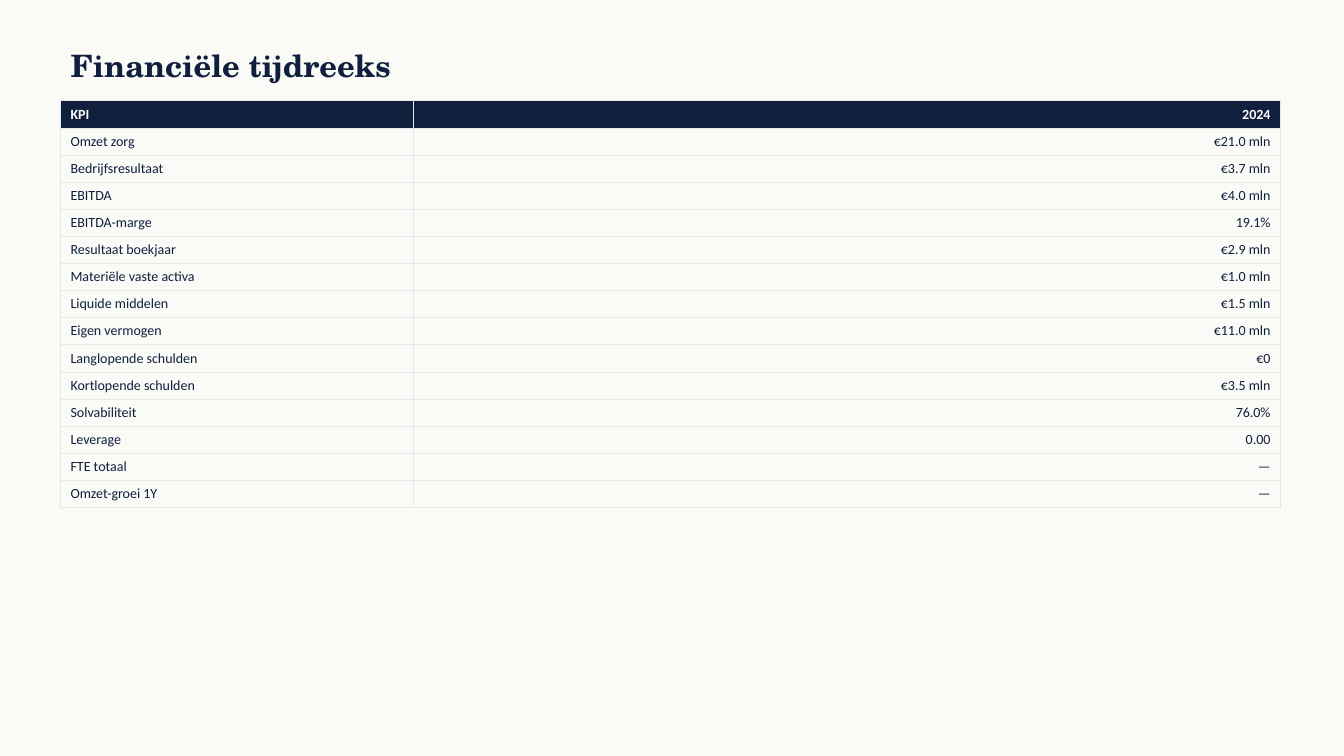
"""Build a slide with a table of financial key figures."""
from dataclasses import dataclass

from lxml import etree
from pptx import Presentation
from pptx.dml.color import RGBColor
from pptx.enum.text import MSO_ANCHOR, MSO_AUTO_SIZE, PP_ALIGN
from pptx.oxml.ns import qn
from pptx.util import Inches, Pt

LEFT, RIGHT = PP_ALIGN.LEFT, PP_ALIGN.RIGHT
MIDDLE = MSO_ANCHOR.MIDDLE
NO_AUTOFIT = MSO_AUTO_SIZE.NONE
TITLE_ONLY = 5

TITLE = "Financiële tijdreeks"
ROWS = [
    ("KPI", "2024"),
    ("Omzet zorg", "€21.0 mln"),
    ("Bedrijfsresultaat", "€3.7 mln"),
    ("EBITDA", "€4.0 mln"),
    ("EBITDA-marge", "19.1%"),
    ("Resultaat boekjaar", "€2.9 mln"),
    ("Materiële vaste activa", "€1.0 mln"),
    ("Liquide middelen", "€1.5 mln"),
    ("Eigen vermogen", "€11.0 mln"),
    ("Langlopende schulden", "€0"),
    ("Kortlopende schulden", "€3.5 mln"),
    ("Solvabiliteit", "76.0%"),
    ("Leverage", "0.00"),
    ("FTE totaal", "—"),
    ("Omzet-groei 1Y", "—"),
]
COL_WIDTHS = (3.5, 8.6)
COL_ALIGNS = (LEFT, RIGHT)
ROW_HEIGHT = 0.26


@dataclass(frozen=True)
class Theme:
    background: str = "FAFAF7"
    navy: str = "0F1F3D"
    white: str = "FFFFFF"
    grid: str = "E5E7EB"
    title_font: str = "TeX Gyre Schola"
    body_font: str = "Calibri"
    title_size: float = 22
    body_size: float = 10
    grid_width: float = 0.5


THEME = Theme()


def rgb(color):
    return RGBColor.from_string(color)


def write(tf, text, font=THEME.body_font, size=THEME.body_size,
          color=THEME.navy, bold=False, align=LEFT):
    p = tf.paragraphs[0]
    p.alignment = align
    r = p.add_run()
    r.text = text
    r.font.name = font
    r.font.size = Pt(size)
    r.font.bold = bold
    r.font.color.rgb = rgb(color)


def add_borders(cell):
    tc_pr = cell._tc.get_or_add_tcPr()
    for side in ("lnL", "lnR", "lnT", "lnB"):
        ln = etree.SubElement(tc_pr, qn(f"a:{side}"), w=str(Pt(THEME.grid_width)))
        fill = etree.SubElement(ln, qn("a:solidFill"))
        etree.SubElement(fill, qn("a:srgbClr"), val=THEME.grid)


def add_title(s):
    sp = s.shapes.title
    sp.left, sp.top = Inches(0.6), Inches(0.4)
    sp.width, sp.height = Inches(12), Inches(0.5)
    tf = sp.text_frame
    tf.word_wrap = True
    tf.auto_size = NO_AUTOFIT
    tf.vertical_anchor = MIDDLE
    write(tf, TITLE, font=THEME.title_font, size=THEME.title_size, bold=True)


def add_kpi_table(s):
    frame = s.shapes.add_table(
        len(ROWS), len(COL_WIDTHS), Inches(0.6), Inches(1),
        Inches(sum(COL_WIDTHS)), Inches(ROW_HEIGHT * len(ROWS)))
    table = frame.table
    table.horz_banding = False
    for col, width in zip(table.columns, COL_WIDTHS):
        col.width = Inches(width)
    for i, values in enumerate(ROWS):
        header = i == 0
        table.rows[i].height = Inches(ROW_HEIGHT)
        for j, (text, align) in enumerate(zip(values, COL_ALIGNS)):
            cell = table.cell(i, j)
            add_borders(cell)
            if header:
                cell.fill.solid()
                cell.fill.fore_color.rgb = rgb(THEME.navy)
            else:
                cell.fill.background()
            write(cell.text_frame, text, bold=header, align=align,
                  color=THEME.white if header else THEME.navy)


def main():
    prs = Presentation()
    prs.slide_width, prs.slide_height = Inches(13.33), Inches(7.5)
    s = prs.slides.add_slide(prs.slide_layouts[TITLE_ONLY])
    s.background.fill.solid()
    s.background.fill.fore_color.rgb = rgb(THEME.background)
    add_title(s)
    add_kpi_table(s)
    prs.save("out.pptx")


if __name__ == "__main__":
    main()
